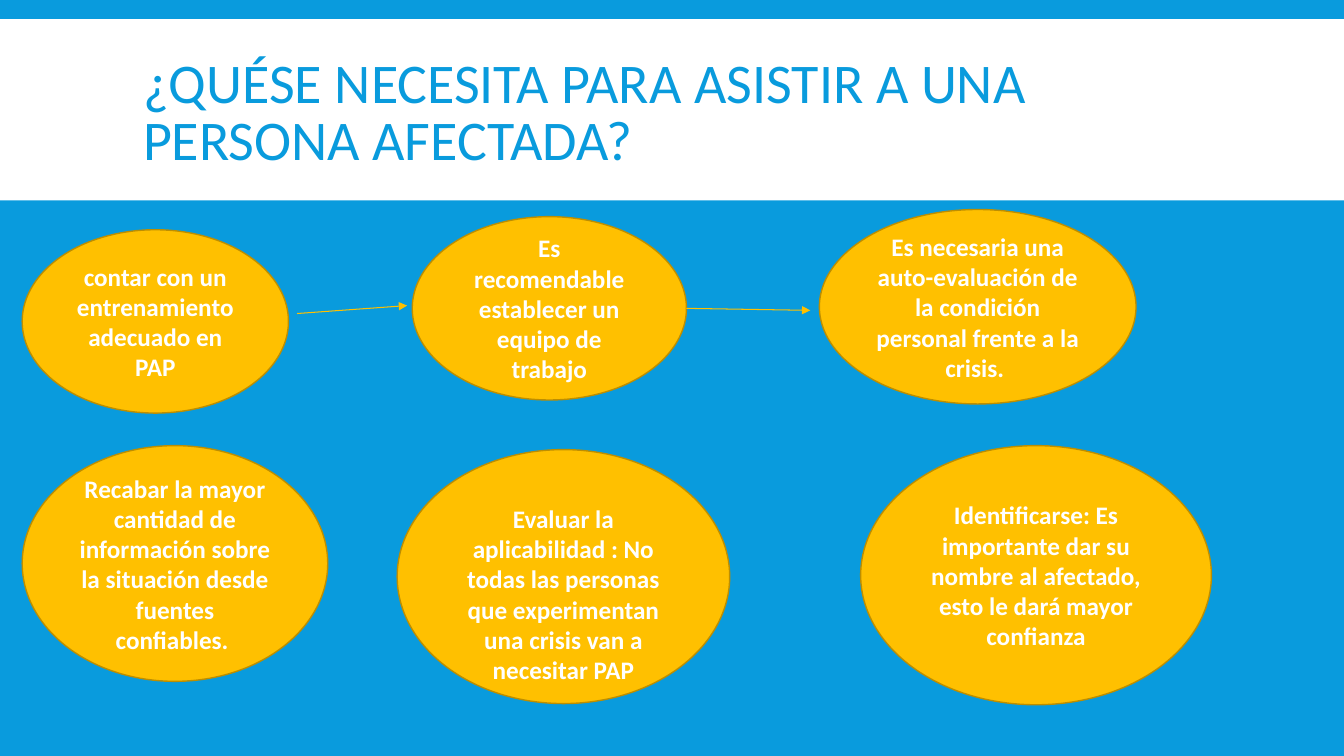
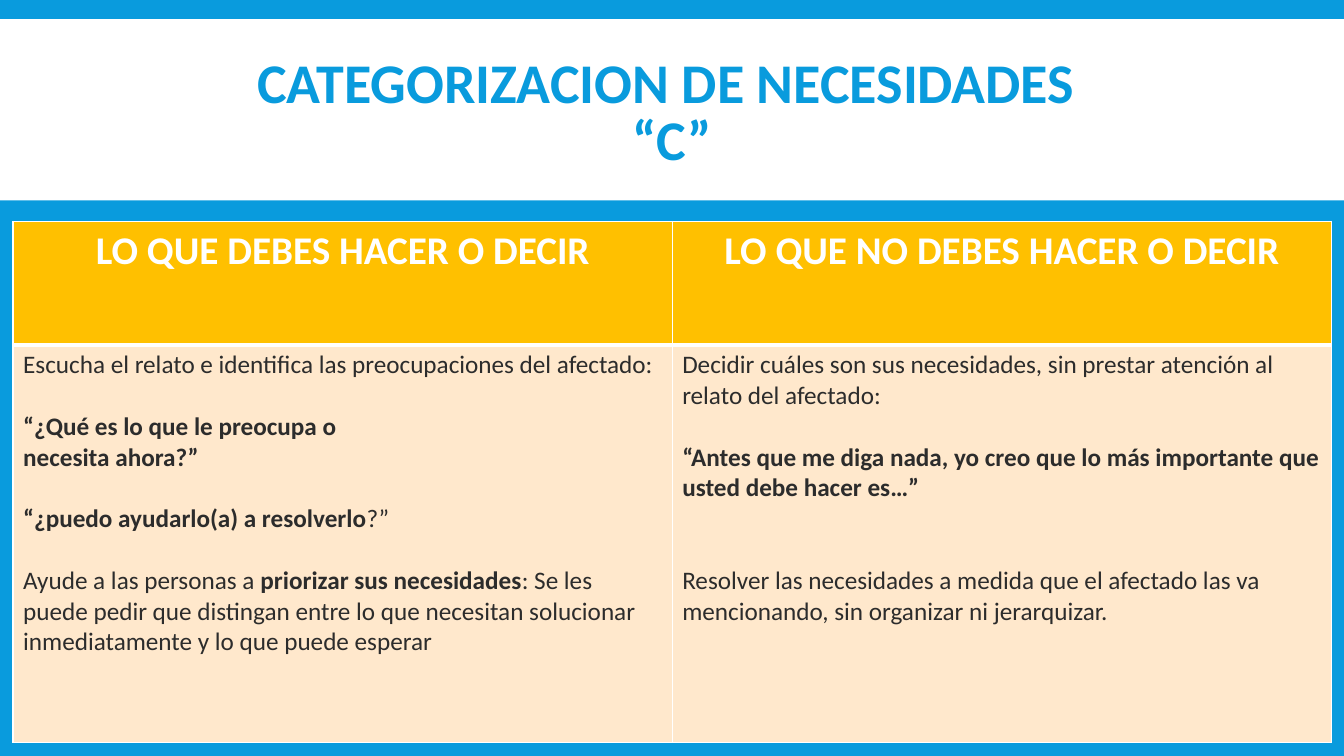
"""Build two slides on psychological first aid: what it takes to help, and what to say."""
from lxml import etree
from pptx import Presentation
from pptx.dml.color import RGBColor
from pptx.enum.shapes import MSO_CONNECTOR, MSO_SHAPE
from pptx.enum.text import MSO_ANCHOR, PP_ALIGN
from pptx.oxml.ns import qn
from pptx.util import Cm, Pt

OVAL, RECT = MSO_SHAPE.OVAL, MSO_SHAPE.RECTANGLE
STRAIGHT = MSO_CONNECTOR.STRAIGHT
LEFT, CENTER = PP_ALIGN.LEFT, PP_ALIGN.CENTER
MIDDLE = MSO_ANCHOR.MIDDLE

FONT = "Calibri"
COLORS = {"blue": "099BDD", "white": "FFFFFF", "gold": "FFC000",
          "edge": "BD8E00", "cream": "FFE8CC", "ink": "2C2C2C"}
WIDTH, HEIGHT = 33.87, 19.05
BAND = (0, 0.48, WIDTH, 4.57)
TITLE = (3.35, 0.79, 27.18, 4.19)

NEEDS_TITLE = "¿QUÉSE NECESITA PARA ASISTIR A UNA PERSONA AFECTADA?"
TOP_INSET = 0.13
NEEDS = [
    ("contar con un entrenamiento adecuado en PAP",
     (0.56, 5.79, 6.71, 4.62), TOP_INSET),
    ("Es recomendable establecer un equipo de trabajo",
     (10.39, 5.46, 6.91, 4.62), TOP_INSET),
    ("Es necesaria una auto-evaluación de la condición personal frente a la crisis. ",
     (20.65, 5.28, 7.98, 4.9), TOP_INSET),
    ("Recabar la mayor cantidad de información sobre la situación desde fuentes confiables. ",
     (0.56, 11.23, 7.7, 5.94), TOP_INSET),
    ("Evaluar la aplicabilidad : No todas las personas que experimentan una crisis van a necesitar PAP",
     (10.01, 11.33, 8.38, 6.4), 1),
    ("Identificarse: Es importante dar su nombre al afectado, esto le dará mayor confianza",
     (21.69, 11.23, 8.84, 6.53), TOP_INSET),
]
ARROWS = [(7.49, 7.9, 10.26, 7.7), (17.3, 7.77, 20.42, 7.82)]

ADVICE_TITLE = "CATEGORIZACION DE NECESIDADES \v“C”"
TABLE_AT = (0.33, 5.59)
COL_WIDTH, ROW_HEIGHTS = 16.61, (3.1, 10.01)
LINE_GAP = 22
ADVICE = [
    ("LO QUE DEBES HACER O DECIR", [
        (0, [("Escucha el relato e identifica las preocupaciones del afectado:", False)]),
        (1, [("“¿Qué es lo que le preocupa o", True)]),
        (0, [("necesita ahora?”", True)]),
        (1, [("“¿puedo ayudarlo(a) a resolverlo", True), ("?”", False)]),
        (1, [("Ayude a las personas a ", False), ("priorizar sus necesidades", True),
             (": Se les puede pedir que distingan entre lo que necesitan solucionar "
              "inmediatamente y lo que puede esperar", False)]),
    ]),
    ("LO QUE NO DEBES HACER O DECIR", [
        (0, [("Decidir cuáles son sus necesidades, sin prestar atención al relato del afectado:", False)]),
        (1, [("“Antes que me diga nada, yo creo que lo más importante que usted debe hacer es…”", True)]),
        (2, [("Resolver las necesidades a medida que el afectado las va mencionando, "
              "sin organizar ni jerarquizar.", False)]),
    ]),
]


def rgb(name):
    return RGBColor.from_string(COLORS[name])


def cms(values):
    return [Cm(v) for v in values]


def style_run(r, size, color, bold):
    r.font.name, r.font.size, r.font.bold = FONT, Pt(size), bold
    r.font.color.rgb = rgb(color)


def style_text(tf, size, color, bold, align):
    for p in tf.paragraphs:
        p.alignment = align
        for r in p.runs:
            style_run(r, size, color, bold)


def add_box(s, kind, at, fill, edge=None):
    sp = s.shapes.add_shape(kind, *cms(at))
    sp.shadow.inherit = False
    sp.fill.solid()
    sp.fill.fore_color.rgb = rgb(fill)
    if edge:
        sp.line.color.rgb = rgb(edge)
        sp.line.width = Pt(1)
    else:
        sp.line.fill.background()
    return sp


def prepare_layout(prs):
    bg = prs.slide_master.background.fill
    bg.solid()
    bg.fore_color.rgb = rgb("blue")
    layout = prs.slide_layouts[5]
    for ph in list(layout.placeholders)[1:]:
        ph.element.getparent().remove(ph.element)
    return layout


def add_slide(prs, layout, title, bold, align):
    s = prs.slides.add_slide(layout)
    sp = s.shapes.title
    sp.left, sp.top, sp.width, sp.height = cms(TITLE)
    tf = sp.text_frame
    tf.text = title
    tf.word_wrap = True
    tf.vertical_anchor = MIDDLE
    tf.paragraphs[0].line_spacing = 0.85
    style_text(tf, 40, "blue", bold, align)
    return s


def add_need(s, text, at, top_inset):
    tf = add_box(s, OVAL, at, "gold", "edge").text_frame
    tf.text = text
    tf.word_wrap = True
    tf.vertical_anchor = MIDDLE
    tf.margin_top = Cm(top_inset)
    style_text(tf, 18, "white", True, CENTER)


def add_arrow(s, ends):
    line = s.shapes.add_connector(STRAIGHT, *cms(ends))
    line.line.color.rgb = rgb("gold")
    line.line.width = Pt(0.75)
    etree.SubElement(line.line._get_or_add_ln(), qn("a:tailEnd"), type="triangle")
    etree.SubElement(line.element.spPr, qn("a:effectLst"))


def set_cell(cell, fill, borders):
    cell.fill.solid()
    cell.fill.fore_color.rgb = rgb(fill)
    tc_pr = cell._tc.get_or_add_tcPr()
    for i, (side, width) in enumerate(borders.items()):
        ln = etree.Element(qn(f"a:ln{side}"), w=str(Pt(width)))
        solid = etree.SubElement(ln, qn("a:solidFill"))
        etree.SubElement(solid, qn("a:srgbClr"), val=COLORS["white"])
        tc_pr.insert(i, ln)


def fill_body(tf, paragraphs):
    for i, (gap, runs) in enumerate(paragraphs):
        p = tf.add_paragraph() if i else tf.paragraphs[0]
        p.alignment = LEFT
        p.space_before = Pt(gap * LINE_GAP)
        for text, bold in runs:
            r = p.add_run()
            r.text = text
            style_run(r, 18, "ink", bold)


def add_advice(s):
    size = (COL_WIDTH * len(ADVICE), sum(ROW_HEIGHTS))
    table = s.shapes.add_table(len(ROW_HEIGHTS), len(ADVICE), *cms(TABLE_AT + size)).table
    for row, height in zip(table.rows, ROW_HEIGHTS):
        row.height = Cm(height)
    for col, (heading, paragraphs) in enumerate(ADVICE):
        table.columns[col].width = Cm(COL_WIDTH)
        head, body = table.cell(0, col), table.cell(1, col)
        set_cell(head, "gold", {"L": 1, "R": 1, "T": 1, "B": 3})
        set_cell(body, "cream", {"L": 1, "R": 1, "T": 3, "B": 1})
        head.text_frame.text = heading
        style_text(head.text_frame, 28, "white", True, CENTER)
        fill_body(body.text_frame, paragraphs)


def main():
    prs = Presentation()
    prs.slide_width, prs.slide_height = Cm(WIDTH), Cm(HEIGHT)
    layout = prepare_layout(prs)

    s = add_slide(prs, layout, NEEDS_TITLE, False, LEFT)
    band = add_box(s, RECT, BAND, "white")
    layout.shapes.element.insert(2, band.element)
    for need in NEEDS:
        add_need(s, *need)
    for ends in ARROWS:
        add_arrow(s, ends)

    s = add_slide(prs, layout, ADVICE_TITLE, True, CENTER)
    add_advice(s)
    prs.save("out.pptx")


if __name__ == "__main__":
    main()
